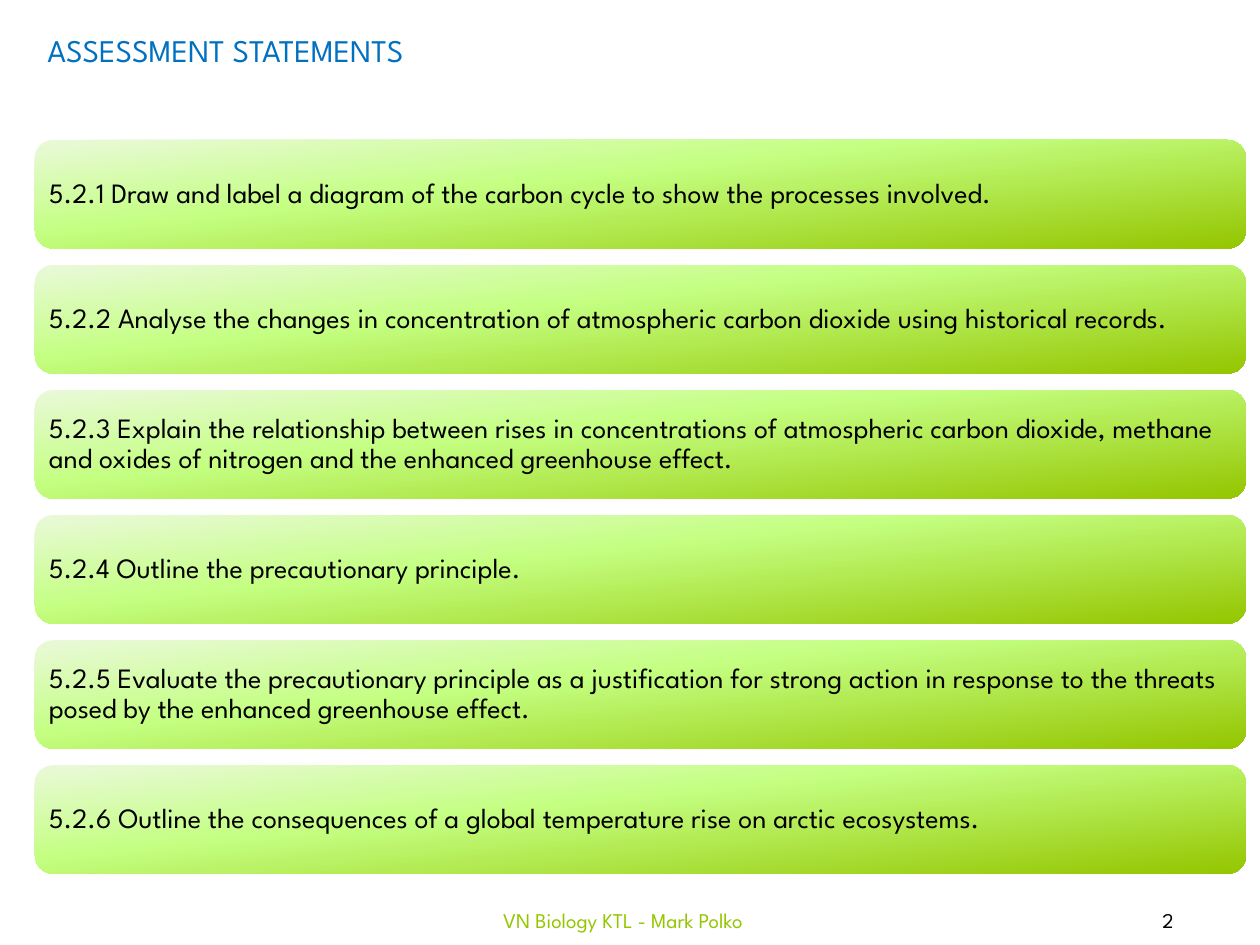
from copy import deepcopy

from pptx import Presentation
from pptx.dml.color import RGBColor
from pptx.enum import shapes, text
from pptx.util import Pt

COLOURS = {
    "title": "0070C0",
    "body": "000000",
    "footer": "94C600",
    "pale": "EAF9DA",
    "light": "C4FF82",
    "green": "94C600",
}
STOPS = [("pale", 0), ("light", 0.4), ("green", 1)]
STATEMENTS = [
    "5.2.1 Draw and label a diagram of the carbon cycle to show the processes involved.",
    "5.2.2 Analyse the changes in concentration of atmospheric carbon dioxide using historical records.",
    "5.2.3 Explain the relationship between rises in concentrations of atmospheric carbon dioxide, "
    "methane and oxides of nitrogen and the enhanced greenhouse effect.",
    "5.2.4 Outline the precautionary principle.",
    "5.2.5 Evaluate the precautionary principle as a justification for strong action in response "
    "to the threats posed by the enhanced greenhouse effect.",
    "5.2.6 Outline the consequences of a global temperature rise on arctic ecosystems.",
]
LEFT, TOP, WIDTH, HEIGHT, PITCH = 20, 80, 692, 62, 71.45


def write(box, words, size, colour, align, anchor):
    frame = box.text_frame
    frame.vertical_anchor = anchor
    para = frame.paragraphs[0]
    para.text = words
    para.alignment = align
    para.font.name = "League Spartan"
    para.font.size = Pt(size)
    para.font.color.rgb = RGBColor.from_string(COLOURS[colour])
    return frame


deck = Presentation()
deck.slide_width, deck.slide_height = Pt(720), Pt(540)
page = deck.slides.add_slide(deck.slide_layouts[6])

title = page.shapes.add_textbox(Pt(LEFT), Pt(14.4), Pt(231), Pt(29))
frame = write(title, "ASSESSMENT STATEMENTS", 18, "title",
              text.PP_ALIGN.LEFT, text.MSO_ANCHOR.TOP)
frame.word_wrap = False
frame.auto_size = text.MSO_AUTO_SIZE.SHAPE_TO_FIT_TEXT

for row, statement in enumerate(STATEMENTS):
    bar = page.shapes.add_shape(
        shapes.MSO_SHAPE.ROUNDED_RECTANGLE,
        Pt(LEFT), Pt(TOP + row * PITCH), Pt(WIDTH), Pt(HEIGHT))
    bar.shadow.inherit = False
    bar.line.fill.background()
    bar.fill.gradient()
    bar.fill.gradient_angle = 276
    first = bar.fill.gradient_stops[0]._gs
    first.addnext(deepcopy(first))
    for stop, (colour, position) in zip(bar.fill.gradient_stops, STOPS):
        stop.color.rgb = RGBColor.from_string(COLOURS[colour])
        stop.position = position
    frame = write(bar, statement, 16, "body", text.PP_ALIGN.LEFT, text.MSO_ANCHOR.MIDDLE)
    frame.word_wrap = True
    frame.margin_left = frame.margin_right = Pt(5)
    frame.margin_top = frame.margin_bottom = Pt(5)
    frame.paragraphs[0].line_spacing = 0.9

for words, left, width, colour in [
    ("VN Biology KTL - Mark Polko", 218, 276, "footer"),
    ("2", 615, 105, "body"),
]:
    box = page.shapes.add_textbox(Pt(left), Pt(511), Pt(width), Pt(29))
    frame = write(box, words, 12, colour, text.PP_ALIGN.CENTER, text.MSO_ANCHOR.MIDDLE)
    frame.word_wrap = True

deck.save("out.pptx")
